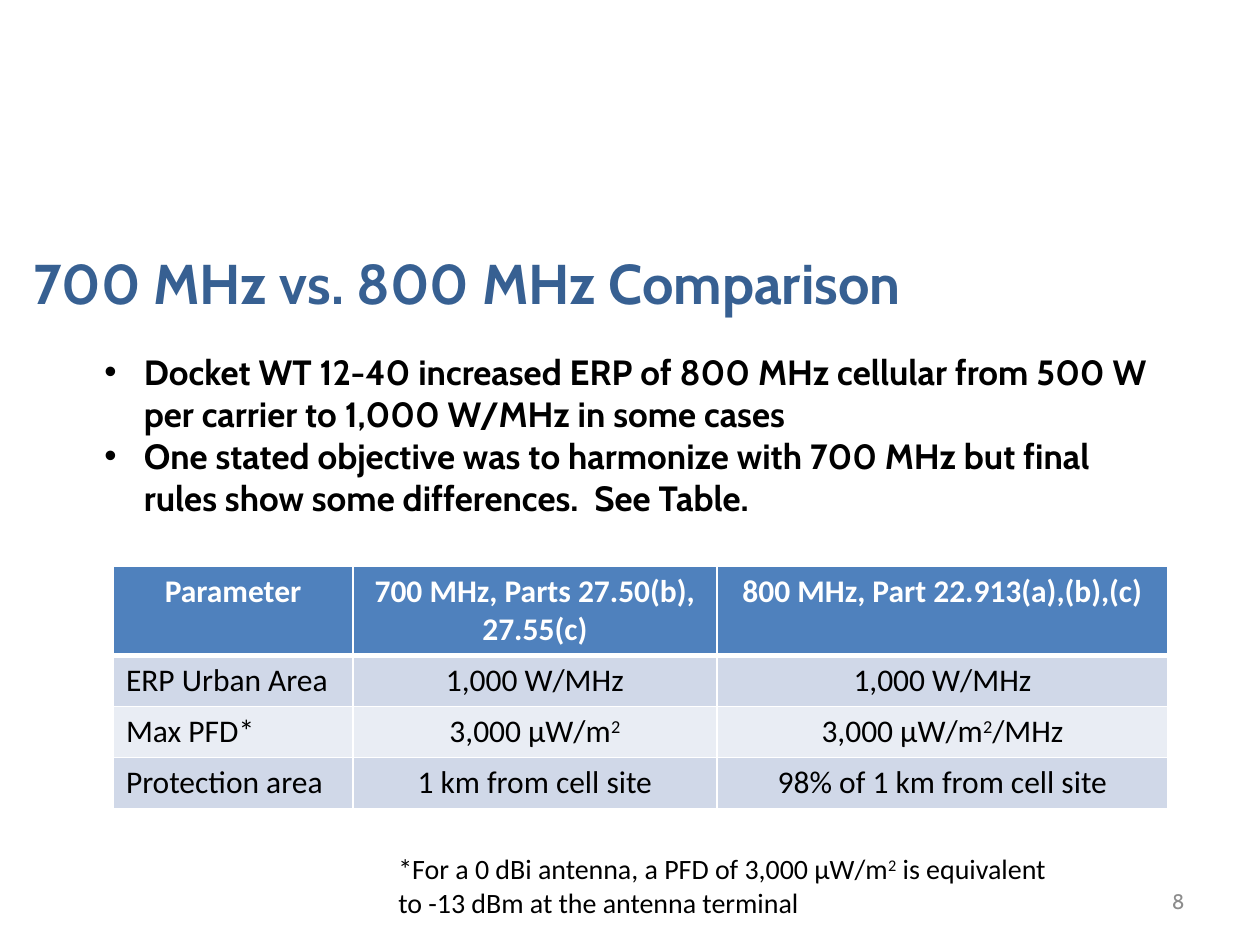
import pptx
import pptx.dml.color
import pptx.enum.text
import pptx.oxml.ns
import pptx.util
from lxml import etree

Pt = pptx.util.Pt
ALIGN = pptx.enum.text.PP_ALIGN
ANCHOR = pptx.enum.text.MSO_ANCHOR
AUTO_SIZE = pptx.enum.text.MSO_AUTO_SIZE

BULLETS = [
    "Docket WT 12-40 increased ERP of 800 MHz cellular from 500 W per carrier to 1,000 W/MHz in some cases",
    "One stated objective was to harmonize with 700 MHz but final rules show some differences.  See Table.",
]
TABLE_ROWS = [
    ["Parameter", "700 MHz, Parts 27.50(b), 27.55(c)", "800 MHz, Part 22.913(a),(b),(c)"],
    ["ERP Urban Area", "1,000 W/MHz", "1,000 W/MHz"],
    ["Max PFD*", "3,000 μW/m^2^", "3,000 μW/m^2^/MHz"],
    ["Protection area", "1 km from cell site", "98% of 1 km from cell site"],
]
COLUMN_WIDTHS = [136.8, 208.1, 257.8]
ROW_HEIGHTS = [51, 29.2, 29.2, 29.2]
HEADER_FILL = "4F81BD"
BAND_FILLS = ["E9EDF4", "D0D8E8"]


def rgb(color):
    return pptx.dml.color.RGBColor.from_string(color)


def write_text(paragraph, text, size=18, font="Calibri", color="000000", bold=False, align=ALIGN.LEFT):
    """Write text in which ^marks^ enclose a superscript."""
    paragraph.alignment = align
    for index, part in enumerate(text.split("^")):
        run = paragraph.add_run()
        run.text = part
        run.font.size = Pt(size)
        run.font.name = font
        run.font.bold = bold
        run.font.color.rgb = rgb(color)
        if index % 2:
            run.font._element.set("baseline", "30000")


def place(shape, left, top, width, height):
    shape.left, shape.top = Pt(left), Pt(top)
    shape.width, shape.height = Pt(width), Pt(height)


def add_title(slide, text):
    title = slide.shapes.title
    place(title, 12, 137, 622, 48)
    title.text_frame.auto_size = AUTO_SIZE.NONE
    write_text(title.text_frame.paragraphs[0], text, size=32, font="Cabin", color="376092", bold=True)


def add_bullets(slide, texts):
    body = slide.placeholders[1]
    place(body, 52.5, 196.5, 615, 104.5)
    frame = body.text_frame
    frame.auto_size = AUTO_SIZE.NONE
    for index, text in enumerate(texts):
        paragraph = frame.add_paragraph() if index else frame.paragraphs[0]
        properties = paragraph._p.get_or_add_pPr()
        properties.set("marL", str(Pt(22.5)))
        properties.set("indent", str(-Pt(22.5)))
        paragraph.space_before = Pt(0)
        write_text(paragraph, text, size=20, font="Cabin", bold=True)


def add_text_box(slide, text, left, top, width, height, anchor=ANCHOR.TOP, **text_format):
    frame = slide.shapes.add_textbox(Pt(left), Pt(top), Pt(width), Pt(height)).text_frame
    frame.word_wrap = True
    frame.vertical_anchor = anchor
    write_text(frame.paragraphs[0], text, **text_format)


def set_borders(cell, color, **widths):
    qn = pptx.oxml.ns.qn
    properties = cell._tc.get_or_add_tcPr()
    for side, width in widths.items():
        line = etree.SubElement(properties, qn(f"a:ln{side}"), w=str(Pt(width)))
        fill = etree.SubElement(line, qn("a:solidFill"))
        etree.SubElement(fill, qn("a:srgbClr"), val=color)


def add_comparison_table(slide, rows):
    table = slide.shapes.add_table(
        len(rows), len(COLUMN_WIDTHS), Pt(64.8), Pt(323.3), Pt(sum(COLUMN_WIDTHS)), Pt(sum(ROW_HEIGHTS))
    ).table
    for column, width in zip(table.columns, COLUMN_WIDTHS):
        column.width = Pt(width)
    for row_index, texts in enumerate(rows):
        table.rows[row_index].height = Pt(ROW_HEIGHTS[row_index])
        header = row_index == 0
        for column_index, text in enumerate(texts):
            cell = table.cell(row_index, column_index)
            set_borders(cell, "FFFFFF", L=1, R=1, T=3 if row_index == 1 else 1, B=3 if header else 1)
            cell.fill.solid()
            cell.fill.fore_color.rgb = rgb(HEADER_FILL if header else BAND_FILLS[row_index % 2])
            write_text(
                cell.text_frame.paragraphs[0],
                text,
                color="FFFFFF" if header else "000000",
                bold=header,
                align=ALIGN.CENTER if header or column_index else ALIGN.LEFT,
            )


def main():
    presentation = pptx.Presentation()
    presentation.slide_width, presentation.slide_height = Pt(720), Pt(540)
    slide = presentation.slides.add_slide(presentation.slide_layouts[1])
    add_title(slide, "700 MHz vs. 800 MHz Comparison")
    add_bullets(slide, BULLETS)
    add_comparison_table(slide, TABLE_ROWS)
    add_text_box(
        slide,
        "*For a 0 dBi antenna, a PFD of 3,000 μW/m^2^ is equivalent to -13 dBm at the antenna terminal",
        220.5, 483, 399.5, 46, size=16,
    )
    add_text_box(
        slide, "8", 516, 500.5, 168, 28.8, anchor=ANCHOR.MIDDLE,
        size=12, font="Cabin", color="8C8C8C", align=ALIGN.RIGHT,
    )
    presentation.save("out.pptx")


if __name__ == "__main__":
    main()
